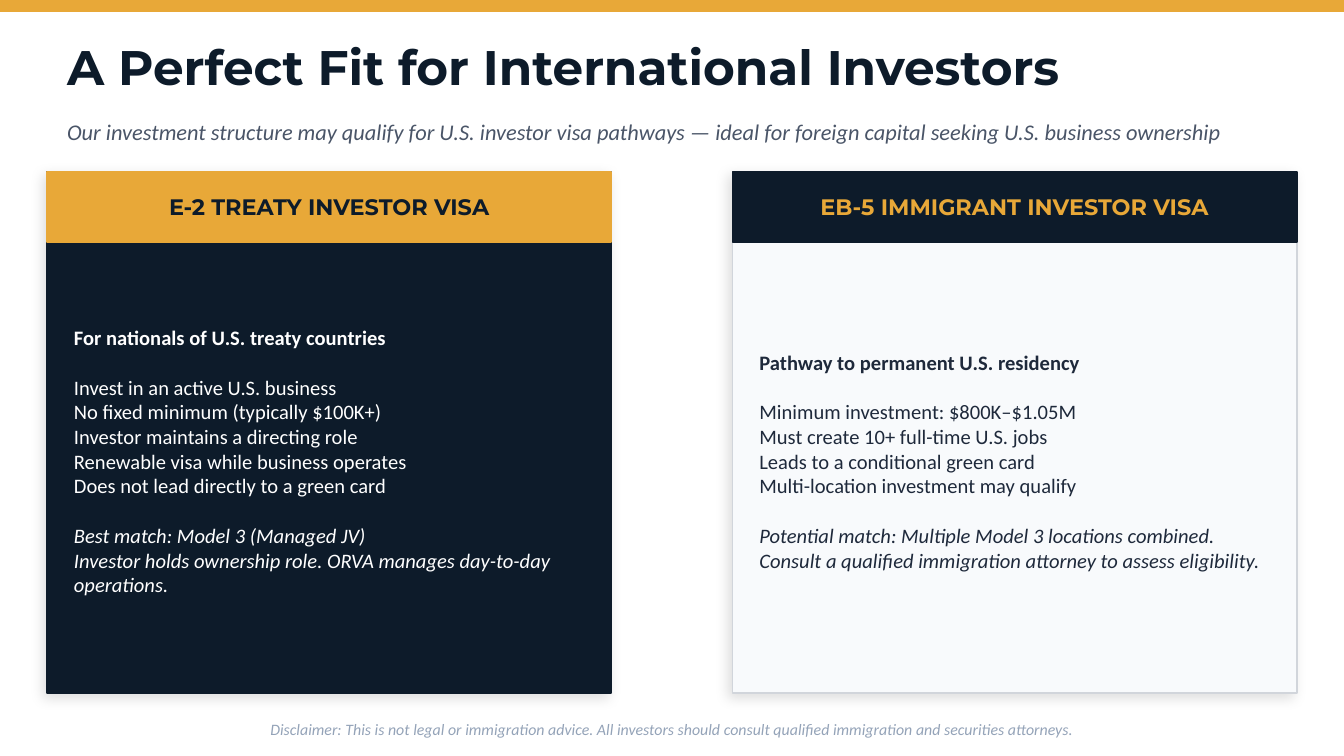
from lxml.etree import SubElement
from pptx import Presentation
from pptx.dml.color import RGBColor
from pptx.enum.shapes import MSO_SHAPE
from pptx.enum.text import MSO_ANCHOR, PP_ALIGN
from pptx.oxml.ns import qn
from pptx.util import Pt

PX = 4572  # 200 px to the inch
HEX = {
    "navy": "0D1B2A", "gold": "E8A838", "white": "FFFFFF", "pale": "F8FAFC",
    "edge": "D1D5DB", "ink": "1E293B", "slate": "4A5568", "mist": "94A3B8",
}
COLOR = {name: RGBColor.from_string(code) for name, code in HEX.items()}

deck = Presentation()
deck.slide_width, deck.slide_height = 2000 * PX, 1125 * PX
slide = deck.slides.add_slide(deck.slide_layouts[6])


def add_box(x, y, w, h, fill, edge):
    box = slide.shapes.add_shape(MSO_SHAPE.RECTANGLE, x * PX, y * PX, w * PX, h * PX)
    box.shadow.inherit = False
    box.fill.solid()
    box.fill.fore_color.rgb = COLOR[fill]
    box.line.color.rgb = COLOR[edge]
    box.line.width = Pt(1)
    return box


def add_text(x, y, w, h, lines, size, color, face="Calibri", align=PP_ALIGN.LEFT):
    """Write lines of (text, style, space before); style is "b", "i" or ""."""
    frame = slide.shapes.add_textbox(x * PX, y * PX, w * PX, h * PX).text_frame
    frame.word_wrap = True
    frame.vertical_anchor = MSO_ANCHOR.MIDDLE
    frame.margin_left = frame.margin_right = frame.margin_top = frame.margin_bottom = 0
    for i, (text, style, gap) in enumerate(lines):
        para = frame.paragraphs[0] if i == 0 else frame.add_paragraph()
        para.text = text
        para.alignment = align
        para.space_before = Pt(gap)
        font = para.runs[0].font
        font.name, font.size = face, Pt(size)
        font.bold, font.italic = style == "b", style == "i"
        font.color.rgb = COLOR[color]


add_box(0, 0, 2000, 16, "gold", "gold")
add_text(100, 44, 1800, 110, [("A Perfect Fit for International Investors", "b", 0)],
         26, "navy", "Montserrat")
add_text(100, 164, 1800, 64, [(
    "Our investment structure may qualify for U.S. investor visa pathways — "
    "ideal for foreign capital seeking U.S. business ownership", "i", 0)], 12, "slate")

# left, title, lead, facts, match, card fill, card edge, body ink, band fill, band ink
cards = [
    (70, "E-2 TREATY INVESTOR VISA", "For nationals of U.S. treaty countries",
     ["Invest in an active U.S. business",
      "No fixed minimum (typically $100K+)",
      "Investor maintains a directing role",
      "Renewable visa while business operates",
      "Does not lead directly to a green card"],
     ["Best match: Model 3 (Managed JV)",
      "Investor holds ownership role. ORVA manages day-to-day operations."],
     "navy", "navy", "white", "gold", "navy"),
    (1090, "EB-5 IMMIGRANT INVESTOR VISA", "Pathway to permanent U.S. residency",
     ["Minimum investment: $800K–$1.05M",
      "Must create 10+ full-time U.S. jobs",
      "Leads to a conditional green card",
      "Multi-location investment may qualify"],
     ["Potential match: Multiple Model 3 locations combined. "
      "Consult a qualified immigration attorney to assess eligibility."],
     "pale", "edge", "ink", "navy", "gold"),
]
TOP, WIDE, BAND, GAP = 256, 840, 104, 13.4

for x, title, lead, facts, match, fill, edge, ink, band, tint in cards:
    card = add_box(x, TOP, WIDE, 776, fill, edge)
    effects = card._element.spPr.find(qn("a:effectLst"))
    shade = SubElement(effects, qn("a:outerShdw"), blurRad=str(Pt(7)), dist=str(Pt(3)),
                       dir=str(135 * 60000), algn="bl", rotWithShape="0")
    black = SubElement(shade, qn("a:srgbClr"), val="000000")
    SubElement(black, qn("a:alpha"), val="12000")

    add_box(x, TOP, WIDE, BAND, band, band)
    add_text(x, TOP, WIDE, BAND, [(title, "b", 0)], 12, tint, "Montserrat", PP_ALIGN.CENTER)

    lines = [(lead, "b", 0)]
    for group, style in ((facts, ""), (match, "i")):
        lines += [(text, style, 0 if i else GAP) for i, text in enumerate(group)]
    add_text(x + 40, 376, 770, 620, lines, 11, ink)

add_text(80, 1060, 1840, 50, [(
    "Disclaimer: This is not legal or immigration advice. All investors should "
    "consult qualified immigration and securities attorneys.", "i", 0)],
    8.5, "mist", align=PP_ALIGN.CENTER)

deck.save("out.pptx")
